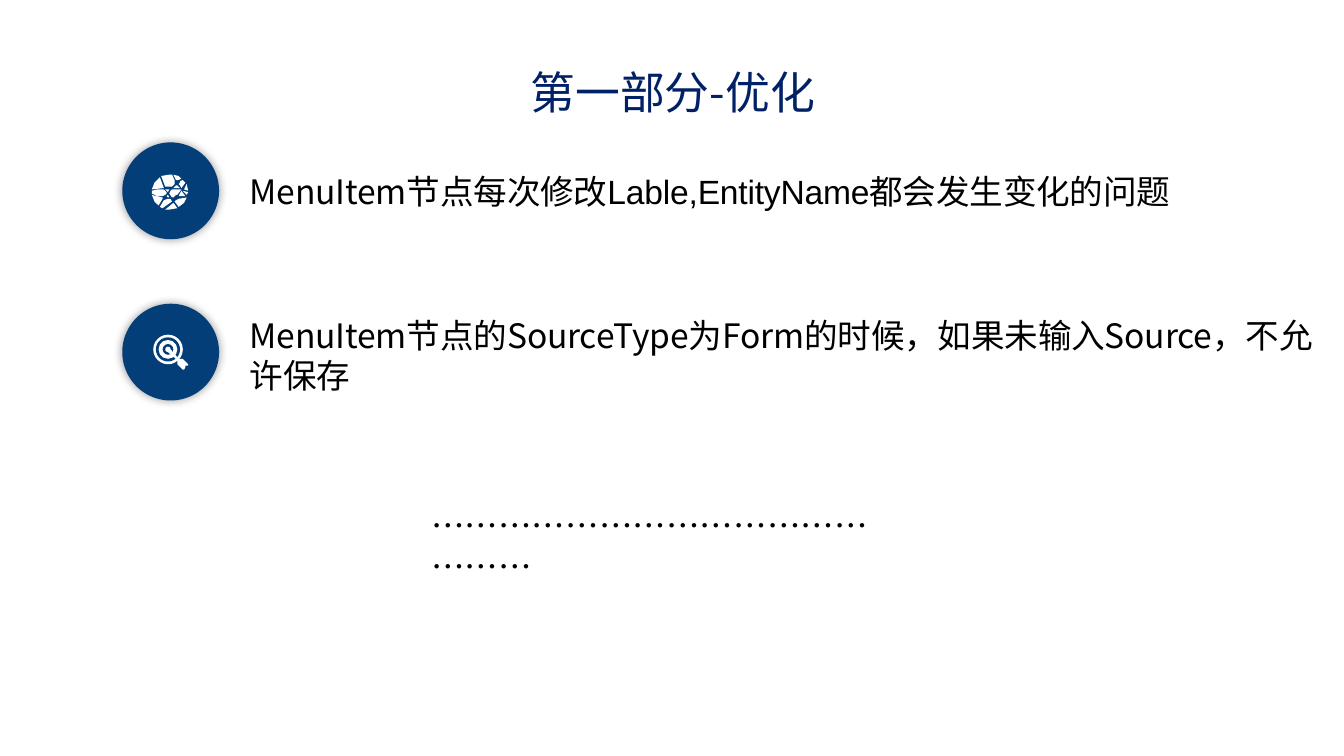
from lxml import etree
from pptx import Presentation
from pptx.dml.color import RGBColor
from pptx.enum.shapes import MSO_SHAPE
from pptx.enum.text import MSO_ANCHOR, PP_ALIGN
from pptx.oxml.ns import qn
from pptx.util import Inches, Pt

OVAL = MSO_SHAPE.OVAL
CENTER, LEFT = PP_ALIGN.CENTER, PP_ALIGN.LEFT
TOP = MSO_ANCHOR.TOP

SLIDE_WIDTH = 10
SLIDE_HEIGHT = SLIDE_WIDTH * 9 / 16

COLORS = {"title": "002166", "badge": "033E78", "icon": "FFFFFF",
          "text": "000000", "shadow": "000000"}
CJK, LATIN = "Noto Sans CJK SC", "Arial"

TITLE = "第一部分-优化"
# Each item is a list of (text, Latin font) runs
ITEMS = [
    [("MenuItem", CJK), ("节点每次修改Lable,EntityName都会发生变化的问题", LATIN)],
    [("MenuItem节点的SourceType为Form的时候，如果未输入Source，不允许保存", CJK)],
]
ELLIPSIS = "…………………………………………"

BADGE_LEFT, BADGE_TOP, BADGE_SIZE, BADGE_STEP = 0.91, 1.06, 0.72, 1.2
TEXT_LEFT, TEXT_WIDTH = 1.86, 8
TEXT_TOPS, TEXT_HEIGHTS = (1.27, 2.34), (0.3, 0.61)

# Outlines in hundredths of an inch from the icon's top left corner
GLOBE_ORIGIN = (1.13, 1.3)
GLOBE = [
    [(16, 21), (17, 22), (19, 25), (13, 26), (10, 26)],
    [(12, 18), (14, 18), (15, 20), (8, 25), (6, 24), (9, 19)],
    [(26, 17), (24, 21), (20, 24), (17, 20), (18, 19), (20, 18)],
    [(0, 15), (3, 16.5), (8, 17), (8, 18), (5, 23), (2, 20)],
    [(12, 15), (13, 17), (12, 17), (11, 16)],
    [(22, 12), (25, 16), (20, 16)],
    [(23, 12), (27, 13), (26, 15)],
    [(9, 11), (11, 13), (11, 14), (10, 15), (8, 16), (4, 15.5), (0, 14), (0, 12), (4, 11)],
    [(15, 11), (22, 11), (19, 15), (18, 15), (16, 17), (15, 17), (13, 14), (14, 12)],
    [(14, 11), (13, 11), (12, 13), (10, 11)],
    [(18, 8), (19, 8), (20, 9), (21, 10), (16, 10)],
    [(26, 7), (27, 12), (24, 11)],
    [(23, 4), (25, 6), (22, 10), (21, 8), (20, 7), (21, 6), (21, 5)],
    [(6, 2), (9, 10), (0, 11), (2, 6)],
    [(16, 0), (20, 1), (22, 3), (20, 4), (18, 4)],
    [(13, 0), (15, 0), (17, 4), (17, 7), (15, 9), (14, 9), (10, 9), (7, 1)],
]
TARGET_ORIGIN = (1.14, 2.49)
TARGET_CENTER = (1.25, 2.6)
TARGET_RADII = (0.11, 0.09, 0.07, 0.04, 0.02)
ARROW = [(12, 11), (13, 11), (19, 18), (22, 18), (26, 22), (26, 23), (24, 23),
         (24, 24), (23, 26), (22, 26), (18, 22), (18, 19), (11, 13)]


def color(name):
    return RGBColor.from_string(COLORS[name])


def paint(shape, name):
    shape.shadow.inherit = False
    shape.fill.solid()
    shape.fill.fore_color.rgb = color(name)
    shape.line.fill.background()


def add_disc(slide, center, radius, name):
    left, top = (Inches(value - radius) for value in center)
    disc = slide.shapes.add_shape(OVAL, left, top, Inches(2 * radius), Inches(2 * radius))
    paint(disc, name)
    return disc


def add_soft_shadow(shape):
    effects = shape._element.spPr.find(qn("a:effectLst"))
    shadow = etree.SubElement(effects, qn("a:outerShdw"), blurRad=str(Pt(5)),
                              dist="0", dir="0", algn="ctr", rotWithShape="0")
    tint = etree.SubElement(shadow, qn("a:srgbClr"), val=COLORS["shadow"])
    etree.SubElement(tint, qn("a:alpha"), val="40000")


def add_outline(slide, origin, contours):
    """Draw closed contours as one freeform."""
    builder = None
    for start, *rest in contours:
        if builder is None:
            builder = slide.shapes.build_freeform(*start, scale=Inches(0.01))
        else:
            builder.move_to(*start)
        builder.add_line_segments(rest, close=True)
    paint(builder.convert_to_shape(*map(Inches, origin)), "icon")


def write(shape, runs, size, name, margins, align=LEFT, spacing=0):
    """Fill a shape with runs; spacing is in hundredths of a point."""
    frame = shape.text_frame
    frame.word_wrap = True
    frame.vertical_anchor = TOP
    frame.margin_left = frame.margin_right = Inches(margins[0])
    frame.margin_top = frame.margin_bottom = Inches(margins[1])
    paragraph = frame.paragraphs[0]
    paragraph.alignment = align
    paragraph.line_spacing = Pt(size * 1.2)
    paragraph.space_before = Pt(0)
    for text, latin in runs:
        run = paragraph.add_run()
        run.text = text
        run.font.size = Pt(size)
        run.font.name = latin
        run.font.color.rgb = color(name)
        properties = run.font._element
        properties.set("spc", str(spacing))
        east_asian = etree.Element(qn("a:ea"), typeface=CJK)
        properties.find(qn("a:latin")).addnext(east_asian)


presentation = Presentation()
presentation.slide_width = Inches(SLIDE_WIDTH)
presentation.slide_height = Inches(SLIDE_HEIGHT)
slide = presentation.slides.add_slide(presentation.slide_layouts[5])

title = slide.shapes.title
title.left, title.top, title.width, title.height = map(Inches, (3.67, 0.45, 2.67, 0.46))
write(title, [(TITLE, CJK)], 24, "title", (0.06, 0.03), CENTER)

radius = BADGE_SIZE / 2
for row, (runs, top, height) in enumerate(zip(ITEMS, TEXT_TOPS, TEXT_HEIGHTS)):
    center = (BADGE_LEFT + radius, BADGE_TOP + row * BADGE_STEP + radius)
    add_soft_shadow(add_disc(slide, center, radius, "badge"))
    box = slide.shapes.add_textbox(*map(Inches, (TEXT_LEFT, top, TEXT_WIDTH, height)))
    write(box, runs, 18, "text", (0, 0), spacing=-10)

add_outline(slide, GLOBE_ORIGIN, GLOBE)
for ring, ring_radius in enumerate(TARGET_RADII):
    add_disc(slide, TARGET_CENTER, ring_radius, "badge" if ring % 2 else "icon")
add_outline(slide, TARGET_ORIGIN, [ARROW])

ellipsis_box = slide.shapes.add_textbox(*map(Inches, (3.11, 3.71, 3.46, 0.4)))
write(ellipsis_box, [(ELLIPSIS, CJK)], 18, "text", (0.1, 0.05))

presentation.save("out.pptx")
